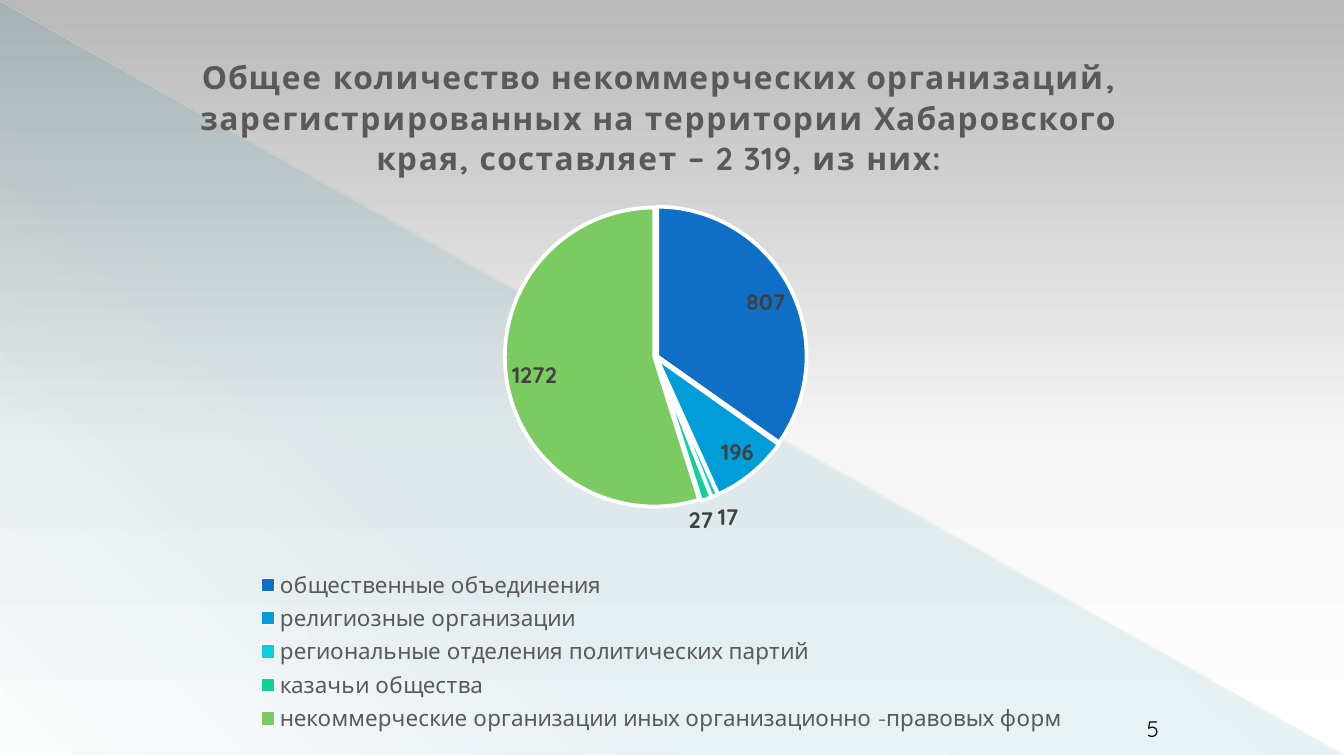
"""Build a slide with a pie chart of non-profit organisations by legal form."""
from dataclasses import dataclass

from lxml.etree import SubElement
from pptx import Presentation
from pptx.chart.data import CategoryChartData
from pptx.dml.color import RGBColor
from pptx.enum.chart import XL_CHART_TYPE, XL_LABEL_POSITION, XL_LEGEND_POSITION
from pptx.enum.shapes import MSO_CONNECTOR, MSO_SHAPE
from pptx.enum.text import MSO_ANCHOR, PP_ALIGN
from pptx.oxml.ns import qn
from pptx.util import Emu, Pt

PX_PER_INCH = 134.4


@dataclass(frozen=True)
class Theme:
    font: str = "Quicksand"
    ink: str = "000000"
    heading: str = "595959"
    label: str = "404040"
    border: str = "FFFFFF"
    veil: str = "04617B"
    diagonal: str = "E9FCFF"
    corner: str = "EBFCFF"
    backdrop: tuple = ((0, "B9B9B9", 100), (60, "F6F6F6", 100), (100, "FFFFFF", 100))
    slices: tuple = ("0F6FC6", "009DD9", "0BD0D9", "10CF9B", "7CCA62")
    title_size: int = 17
    body_size: int = 12
    base_size: int = 10


def px(length):
    return Emu(round(length * 914400 / PX_PER_INCH))


def rgb(value):
    return RGBColor.from_string(value)


def set_alpha(color, percent):
    SubElement(color, qn("a:alpha"), val=str(percent * 1000))


class SlideBuilder:
    def __init__(self, slide, theme):
        self.slide = slide
        self.theme = theme

    def style(self, font, size, color, bold=False):
        font.name = self.theme.font
        font.size = Pt(size)
        font.bold = bold
        font.color.rgb = rgb(color)

    def gradient(self, fill, element, stops, clockwise):
        fill.gradient()
        fill.gradient_angle = 360 - clockwise
        stop_list = element.xpath(".//a:gsLst")[0]
        for stop in list(stop_list):
            stop_list.remove(stop)
        for position, value, opacity in stops:
            stop = SubElement(stop_list, qn("a:gs"), pos=str(position * 1000))
            set_alpha(SubElement(stop, qn("a:srgbClr"), val=value), opacity)

    def background(self):
        fill = self.slide.background.fill
        self.gradient(fill, self.slide.element, self.theme.backdrop, 90)

    def triangle(self, box, stops, clockwise):
        veil = self.slide.shapes.add_shape(MSO_SHAPE.RIGHT_TRIANGLE, *map(px, box))
        veil.shadow.inherit = False
        veil.line.fill.background()
        self.gradient(veil.fill, veil.element, stops, clockwise)

    def line(self, start, end, color, width, opacity):
        ray = self.slide.shapes.add_connector(
            MSO_CONNECTOR.STRAIGHT, *map(px, start + end))
        ray.line.color.rgb = rgb(color)
        ray.line.width = Pt(width)
        set_alpha(ray.element.xpath(".//a:ln//a:srgbClr")[0], opacity)
        SubElement(ray.element.spPr, qn("a:effectLst"))

    def text(self, box, wording, size):
        holder = self.slide.shapes.add_textbox(*map(px, box)).text_frame
        holder.word_wrap = True
        holder.vertical_anchor = MSO_ANCHOR.BOTTOM
        line = holder.paragraphs[0]
        line.text = wording
        line.alignment = PP_ALIGN.CENTER
        self.style(line.font, size, self.theme.ink)

    def place(self, part, index, **fractions):
        for layout in part.findall(qn("c:layout")):
            part.remove(layout)
        layout = part.makeelement(qn("c:layout"))
        part.insert(index, layout)
        manual = SubElement(layout, qn("c:manualLayout"))
        if "w" in fractions and index == 0:
            SubElement(manual, qn("c:layoutTarget"), val="inner")
        for axis in ("x", "y"):
            SubElement(manual, qn(f"c:{axis}Mode"), val="edge")
        for side, fraction in fractions.items():
            SubElement(manual, qn(f"c:{side}"), val=str(fraction))

    def pie(self, box, heading, counts):
        theme = self.theme
        data = CategoryChartData()
        data.categories = list(counts)
        data.add_series("Series 1", list(counts.values()))
        chart = self.slide.shapes.add_chart(
            XL_CHART_TYPE.PIE, *map(px, box), data).chart
        self.style(chart.font, theme.base_size, theme.ink)

        chart.has_title = True
        title = chart.chart_title
        caption = title.text_frame.paragraphs[0]
        caption.text = heading
        self.style(caption.font, theme.title_size, theme.heading, bold=True)
        for properties in title.text_frame._txBody.xpath(".//a:defRPr"):
            properties.set("spc", "50")
        self.place(title._element, 1, x=0.12, y=0.04)

        chart.has_legend = True
        legend = chart.legend
        legend.position = XL_LEGEND_POSITION.BOTTOM
        legend.include_in_layout = False
        self.style(legend.font, theme.body_size, theme.heading)
        self.place(legend._element, 1, x=0.17, y=0.76, w=0.66, h=0.24)

        plot = chart.plots[0]
        plot.vary_by_categories = True
        self.place(plot._element.getparent(), 0, x=0.37, y=0.26, w=0.25, h=0.42)
        series = plot.series[0]
        series.format.line.color.rgb = rgb(theme.border)
        explosion = series._element.makeelement(qn("c:explosion"), val="1")
        series._element.find(qn("c:spPr")).addnext(explosion)
        for index, color in enumerate(theme.slices):
            wedge = series.points[index].format
            wedge.fill.solid()
            wedge.fill.fore_color.rgb = rgb(color)
            wedge.line.color.rgb = rgb(theme.border)
            wedge.line.width = Pt(2)

        labels = series.data_labels
        labels.show_value = True
        labels.position = XL_LABEL_POSITION.BEST_FIT
        self.style(labels.font, theme.body_size, theme.label, bold=True)


def main():
    theme = Theme()
    deck = Presentation()
    deck.slide_width, deck.slide_height = px(1344), px(756)
    builder = SlideBuilder(deck.slides.add_slide(deck.slide_layouts[6]), theme)

    builder.background()
    veil_stops = [(0, theme.veil, 10), (70, theme.veil, 8), (100, theme.veil, 1)]
    builder.triangle((1, 1, 1342, 754), veil_stops, 133)
    builder.line((0, 1), (1343, 756), theme.diagonal, 0.39, 35)
    builder.line((1344, 546), (950, 756), theme.corner, 0.47, 45)
    builder.pie(
        (47, 19, 1230, 719),
        "Общее количество некоммерческих организаций, зарегистрированных "
        "на территории Хабаровского края, составляет – 2 319, из них:",
        {
            "общественные объединения": 807,
            "религиозные организации": 196,
            "региональные отделения политических партий": 17,
            "казачьи общества": 27,
            "некоммерческие организации иных организационно -правовых форм": 1272,
        },
    )
    builder.text((1116, 715, 74, 34), "5", theme.body_size)
    deck.save("out.pptx")


if __name__ == "__main__":
    main()
